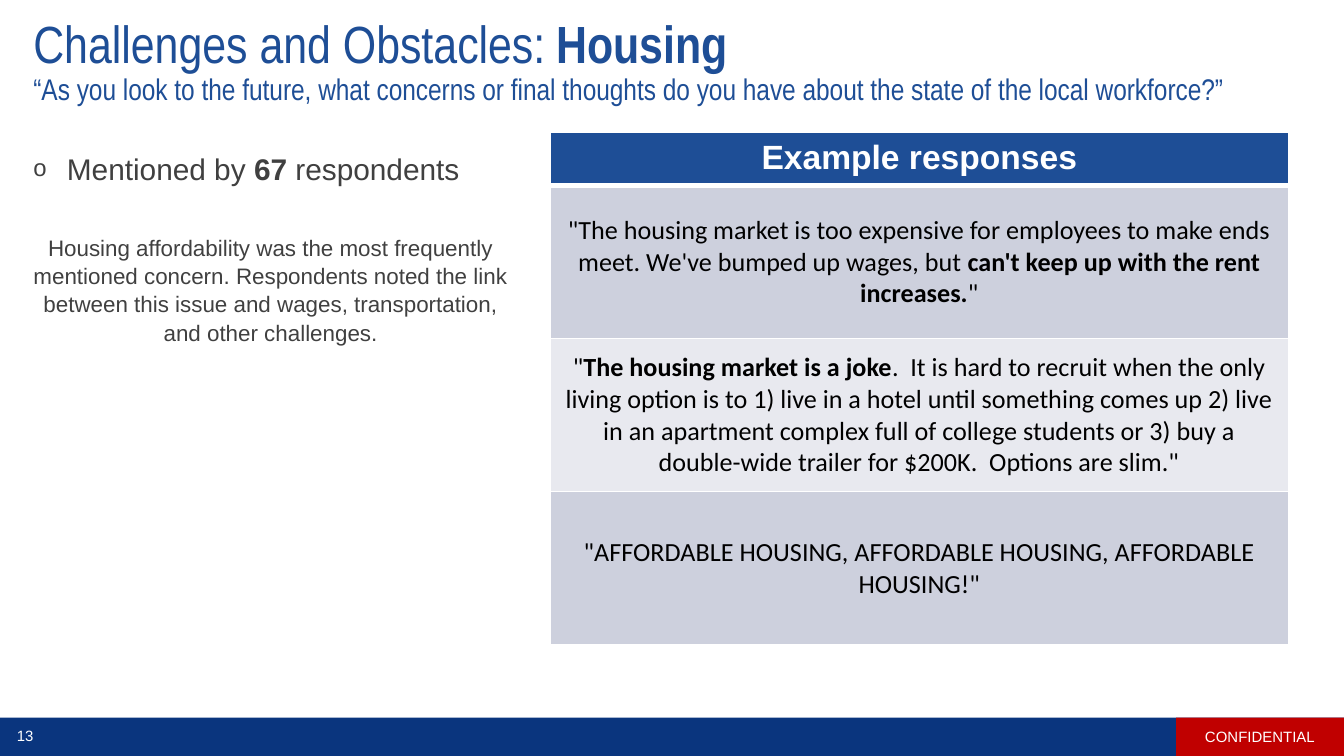
import pptx
import pptx.dml.color
import pptx.enum.shapes
import pptx.enum.text
import pptx.oxml
import pptx.oxml.ns
import pptx.util

Pt = pptx.util.Pt
RGBColor = pptx.dml.color.RGBColor
ALIGN = pptx.enum.text.PP_ALIGN
MIDDLE = pptx.enum.text.MSO_ANCHOR.MIDDLE

WHITE = RGBColor(0xFF, 0xFF, 0xFF)
BLACK = RGBColor(0, 0, 0)
NAVY = RGBColor(0x0A, 0x35, 0x7E)
RED = RGBColor(0xC0, 0, 0)
BLUE = RGBColor(0x1E, 0x4E, 0x96)
GREY = RGBColor(0x40, 0x40, 0x40)
BAND_DARK = RGBColor(0xCD, 0xD0, 0xDD)
BAND_LIGHT = RGBColor(0xE8, 0xE9, 0xEF)


def write(paragraph, pieces, font, size, color, align=ALIGN.LEFT):
    """Fill a paragraph with (text, bold) pieces in one font."""
    paragraph.alignment = align
    paragraph.font.name = font
    paragraph.font.size = Pt(size)
    paragraph.font.color.rgb = color
    for text, bold in pieces:
        run = paragraph.add_run()
        run.text = text
        run.font.bold = bold


def add_text_box(left, top, width, height):
    frame = slide.shapes.add_textbox(Pt(left), Pt(top), Pt(width), Pt(height)).text_frame
    frame.word_wrap = True
    return frame


deck = pptx.Presentation()
deck.slide_width, deck.slide_height = Pt(720), Pt(405)
slide = deck.slides.add_slide(deck.slide_layouts[6])

# Footer band and confidentiality tag
for left, width, color, label in [(0, 720, NAVY, ""), (630, 90, RED, "CONFIDENTIAL")]:
    band = slide.shapes.add_shape(pptx.enum.shapes.MSO_SHAPE.RECTANGLE,
                                  Pt(left), Pt(384.5), Pt(width), Pt(20.5))
    band.shadow.inherit = False
    band.fill.solid()
    band.fill.fore_color.rgb = color
    band.line.fill.background()
    if label:
        band.text_frame.vertical_anchor = MIDDLE
        write(band.text_frame.paragraphs[0], [(label, False)], "Arial", 8, WHITE, ALIGN.CENTER)

# Page number
page_number = add_text_box(0, 385.5, 27, 17)
page_number.vertical_anchor = MIDDLE
write(page_number.paragraphs[0], [("13", False)], "Arial", 8, WHITE, ALIGN.CENTER)

# Title and survey question
title = add_text_box(10.8, 10.8, 696, 45.5)
title.vertical_anchor = MIDDLE
title.margin_left = title.margin_top = title.margin_bottom = Pt(7.2)
title.margin_right = Pt(14.4)
question = title.add_paragraph()
write(title.paragraphs[0], [("Challenges and Obstacles: ", False), ("Housing", True)],
      "Arial Narrow", 28, BLUE)
write(question, [("“As you look to the future, what concerns or final thoughts do you have "
                  "about the state of the local workforce?”", False)], "Arial Narrow", 16, BLUE)
for line in title.paragraphs:
    line.line_spacing = 0.9

# Mention count and summary
findings = add_text_box(10.8, 77, 268.5, 194.5)
mentions = findings.paragraphs[0]
write(mentions, [("Mentioned by ", False), ("67", True), (" respondents", False)],
      "Arial", 16, GREY)
mentions.space_before = Pt(1)
bullet = mentions._p.get_or_add_pPr()
bullet.set("marL", str(Pt(18)))
bullet.set("indent", str(-Pt(18)))
marks = ('<a:buSzPct %s val="80000"/>', '<a:buFont %s typeface="Arial"/>', '<a:buChar %s char="o"/>')
for position, mark in enumerate(marks):
    element = pptx.oxml.parse_xml(mark % pptx.oxml.ns.nsdecls("a"))
    bullet.insert(1 + position, element)  # after the paragraph spacing, before the font
summary = findings.add_paragraph()
write(summary, [("Housing affordability was the most frequently mentioned concern. Respondents "
                 "noted the link between this issue and wages, transportation, and other "
                 "challenges.", False)], "Arial", 12, GREY, ALIGN.CENTER)
summary.space_before = Pt(25)
summary.line_spacing = 1.05

# Example responses
responses = [
    [("Example responses", True)],
    [("\"The housing market is too expensive for employees to make ends meet. "
      "We've bumped up wages, but ", False),
     ("can't keep up with the rent increases.", True), ("\"", False)],
    [("\"", False), ("The housing market is a joke", True),
     (".  It is hard to recruit when the only living option is to 1) live in a hotel until "
      "something comes up 2) live in an apartment complex full of college students or "
      "3) buy a double-wide trailer for $200K.  Options are slim.\"", False)],
    [("\"AFFORDABLE HOUSING, AFFORDABLE HOUSING, AFFORDABLE HOUSING!\"", False)],
]
table = slide.shapes.add_table(len(responses), 1, Pt(294.5), Pt(70.6), Pt(396), Pt(273)).table
table.columns[0].width = Pt(396)
for index, pieces in enumerate(responses):
    header = index == 0
    table.rows[index].height = Pt(27) if header else Pt(82)
    cell = table.cell(index, 0)
    cell.fill.solid()
    if header:
        cell.fill.fore_color.rgb = BLUE
        write(cell.text_frame.paragraphs[0], pieces, "Arial", 18, WHITE, ALIGN.CENTER)
    else:
        cell.fill.fore_color.rgb = BAND_DARK if index % 2 else BAND_LIGHT
        cell.vertical_anchor = MIDDLE
        write(cell.text_frame.paragraphs[0], pieces, "Calibri", 14, BLACK, ALIGN.CENTER)
    # White rules, heavier under the header
    for position, side in enumerate(("lnL", "lnR", "lnT", "lnB")):
        heavy = (header and side == "lnB") or (index == 1 and side == "lnT")
        rule = pptx.oxml.parse_xml(
            f'<a:{side} {pptx.oxml.ns.nsdecls("a")} w="{Pt(3 if heavy else 1)}">'
            f'<a:solidFill><a:srgbClr val="{WHITE}"/></a:solidFill></a:{side}>')
        cell._tc.get_or_add_tcPr().insert(position, rule)

deck.save("out.pptx")
